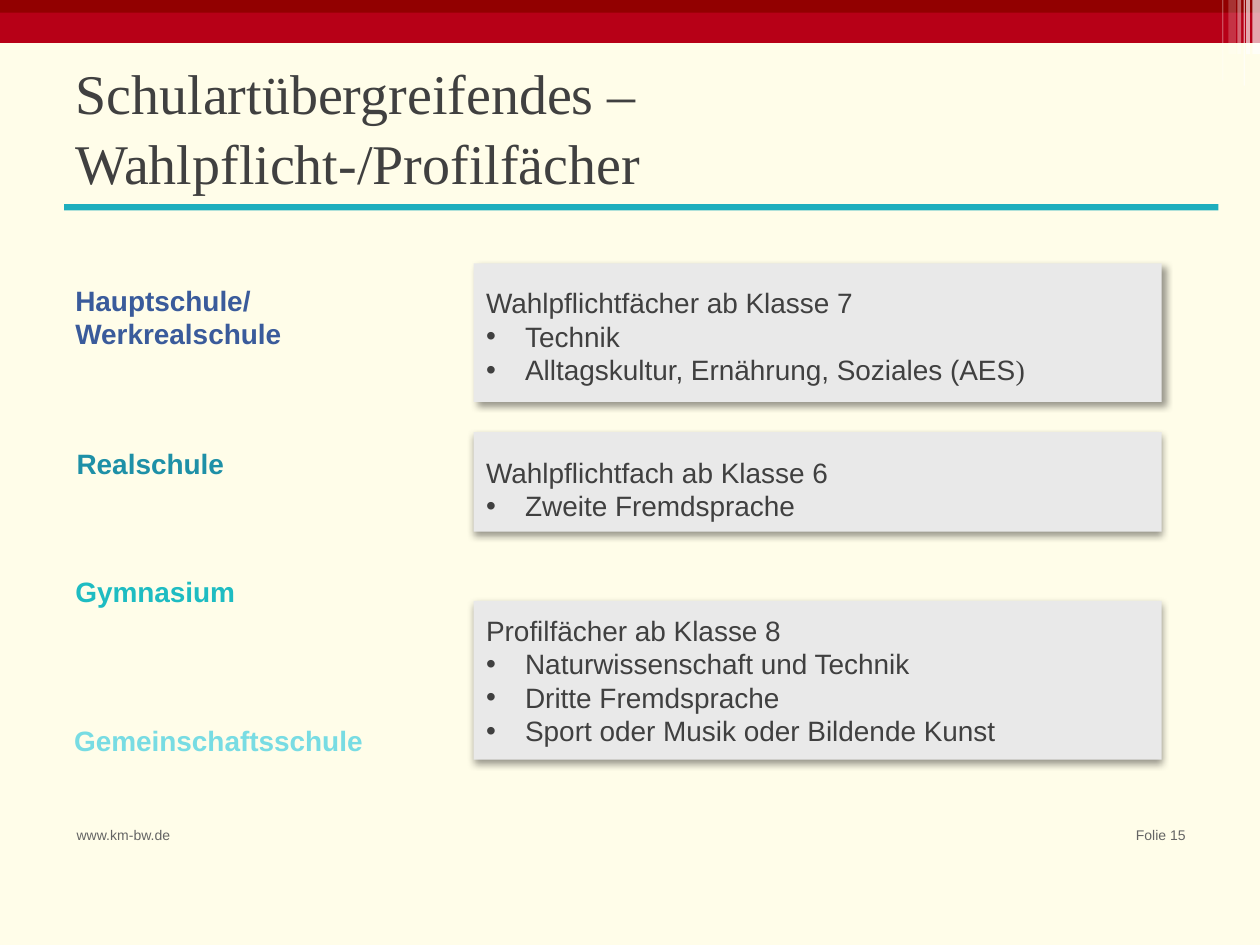
from lxml.etree import SubElement
from pptx import Presentation
from pptx.dml.color import RGBColor
from pptx.enum.shapes import MSO_SHAPE
from pptx.enum.text import MSO_ANCHOR, PP_ALIGN
from pptx.oxml.ns import qn
from pptx.util import Inches, Pt

CREAM, RED, DARK_RED = "FFFDE9", "B70017", "920000"
WHITE, GREY, TEXT, MUTED, TEAL = "FFFFFF", "E9E9E9", "404040", "646464", "1EAEBD"
SERIF, SANS = "Times New Roman", "Arial"

STRIPES = [
    (9.89, 0.03, 0.43, 65), (9.94, 0.06, 0.43, 65), (9.7, 0.01, 0.64, 30),
    (9.87, 0.01, 0.68, 60), (9.75, 0.06, 0.43, 20), (9.82, 0.03, 0.43, 40),
]
SCHOOLS = [
    (0.5, 2.12, "Hauptschule/\nWerkrealschule", "3A5B9B"),
    (0.51, 3.28, "Realschule", "1E90A7"),
    (0.5, 4.3, "Gymnasium", "1EBCC2"),
    (0.49, 5.48, "Gemeinschaftsschule", "78DCE3"),
]
SUBJECTS = [
    (2.09, 1.1, 1.2, (4, 3, 45), "Wahlpflichtfächer ab Klasse 7",
     ["Technik", "Alltagskultur, Ernährung, Soziales (AES"]),
    (3.43, 0.79, 1.4, (4.1, 2, 90), "Wahlpflichtfach ab Klasse 6",
     ["Zweite Fremdsprache"]),
    (4.77, 1.26, 1, (4.1, 2, 90), "Profilfächer ab Klasse 8",
     ["Naturwissenschaft und Technik", "Dritte Fremdsprache",
      "Sport oder Musik oder Bildende Kunst"]),
]


def color(value):
    return RGBColor.from_string(value)


def format_text(text_frame, size, value, name=SANS, bold=False, align=PP_ALIGN.LEFT):
    text_frame.word_wrap = True
    for paragraph in text_frame.paragraphs:
        paragraph.alignment = align
        for run in paragraph.runs:
            run.font.size = Pt(size)
            run.font.name = name
            run.font.bold = bold
            run.font.color.rgb = color(value)


def add_box(slide, left, top, width, height, fill=None, kind=MSO_SHAPE.RECTANGLE):
    shape = slide.shapes.add_shape(
        kind, Inches(left), Inches(top), Inches(width), Inches(height))
    shape.shadow.inherit = False
    shape.line.fill.background()
    if fill:
        shape.fill.solid()
        shape.fill.fore_color.rgb = color(fill)
    else:
        shape.fill.background()
    if kind == MSO_SHAPE.ROUNDED_RECTANGLE:
        shape.adjustments[0] = 0
    return shape


def add_stripe(slide, left, width, height, opacity):
    shape = add_box(slide, left, 0, width, height, WHITE)
    fill_color = shape._element.spPr.find(qn("a:solidFill"))[0]
    SubElement(fill_color, qn("a:alpha"), val=str(opacity * 1000))


def add_shadow(shape, blur, distance, angle):
    effects = shape._element.spPr.find(qn("a:effectLst"))
    shadow = SubElement(
        effects, qn("a:outerShdw"), blurRad=str(Pt(blur)), dist=str(Pt(distance)),
        dir=str(angle * 60000), algn="ctr", rotWithShape="0")
    shadow_color = SubElement(shadow, qn("a:srgbClr"), val="000000")
    SubElement(shadow_color, qn("a:alpha"), val="40000")


def add_bullet(paragraph):
    properties = paragraph._p.get_or_add_pPr()
    properties.set("marL", str(Inches(0.31)))
    properties.set("indent", str(Inches(-0.31)))
    SubElement(properties, qn("a:buFont"), typeface=SANS)
    SubElement(properties, qn("a:buChar"), char="•")


def add_school(slide, left, top, name, value):
    shape = add_box(slide, left, top, 2.6, 0.79, kind=MSO_SHAPE.ROUNDED_RECTANGLE)
    shape.text_frame.text = name
    format_text(shape.text_frame, 16, value, bold=True)


def add_subjects(slide, top, height, spacing, shadow, heading, items):
    shape = add_box(slide, 3.76, top, 5.46, height, GREY, MSO_SHAPE.ROUNDED_RECTANGLE)
    add_shadow(shape, *shadow)
    text_frame = shape.text_frame
    text_frame.text = heading
    text_frame.paragraphs[0].line_spacing = spacing
    for item in items:
        paragraph = text_frame.add_paragraph()
        paragraph.text = item
        add_bullet(paragraph)
    format_text(text_frame, 16, TEXT)
    return text_frame


def close_parenthesis(text_frame):
    run = text_frame.paragraphs[-1].add_run()
    run.text = ")"
    run.font.size = Pt(16)
    run.font.name = SERIF
    run.font.color.rgb = color(TEXT)


def add_footer(slide, left, text, align):
    box = slide.shapes.add_textbox(Inches(left), Inches(6.51), Inches(1), Inches(0.39))
    box.text_frame.text = text
    format_text(box.text_frame, 8, MUTED, align=align)


def set_title(slide, text):
    title = slide.shapes.title
    title.left, title.top = Inches(0.5), Inches(0.61)
    title.width, title.height = Inches(9), Inches(0.77)
    title.text_frame.text = text
    title.text_frame.vertical_anchor = MSO_ANCHOR.MIDDLE
    title.text_frame.paragraphs[0].line_spacing = 1.05
    format_text(title.text_frame, 32, TEXT, SERIF)


def main():
    presentation = Presentation()
    presentation.slide_width, presentation.slide_height = Inches(10), Inches(7.5)
    slide = presentation.slides.add_slide(presentation.slide_layouts[5])
    slide.background.fill.solid()
    slide.background.fill.fore_color.rgb = color(CREAM)

    add_box(slide, 0, 0, 10, 0.34, RED)
    add_box(slide, 0, 0, 10, 0.1, DARK_RED)
    for stripe in STRIPES:
        add_stripe(slide, *stripe)

    set_title(slide, "Schulartübergreifendes –\vWahlpflicht-/Profilfächer")
    add_box(slide, 0.51, 1.62, 9.16, 0.05, TEAL)
    for school in SCHOOLS:
        add_school(slide, *school)
    text_frames = [add_subjects(slide, *subjects) for subjects in SUBJECTS]
    close_parenthesis(text_frames[0])

    add_footer(slide, 0.51, "www.km-bw.de", PP_ALIGN.LEFT)
    add_footer(slide, 8.51, "Folie 15", PP_ALIGN.RIGHT)
    presentation.save("out.pptx")


if __name__ == "__main__":
    main()
